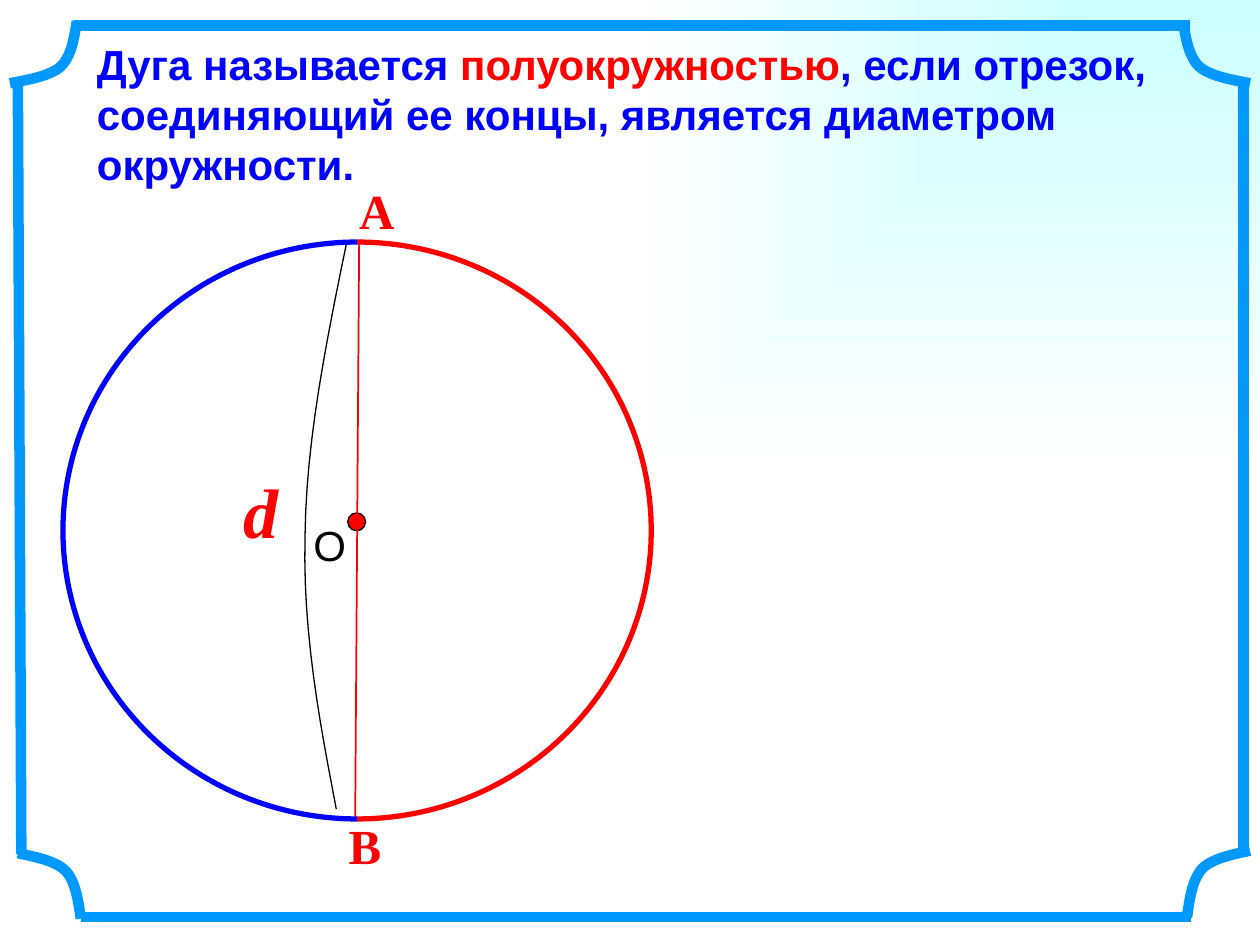
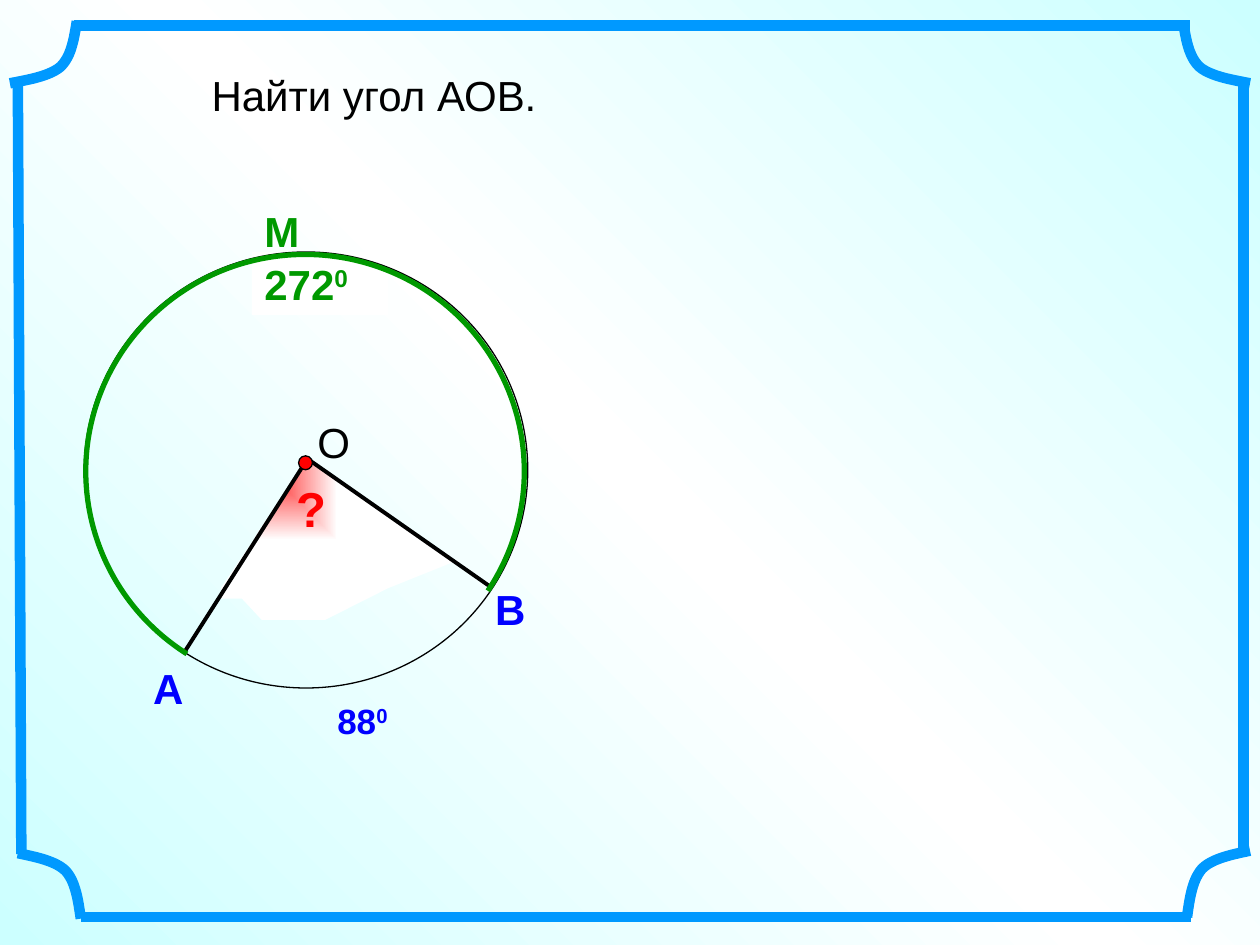
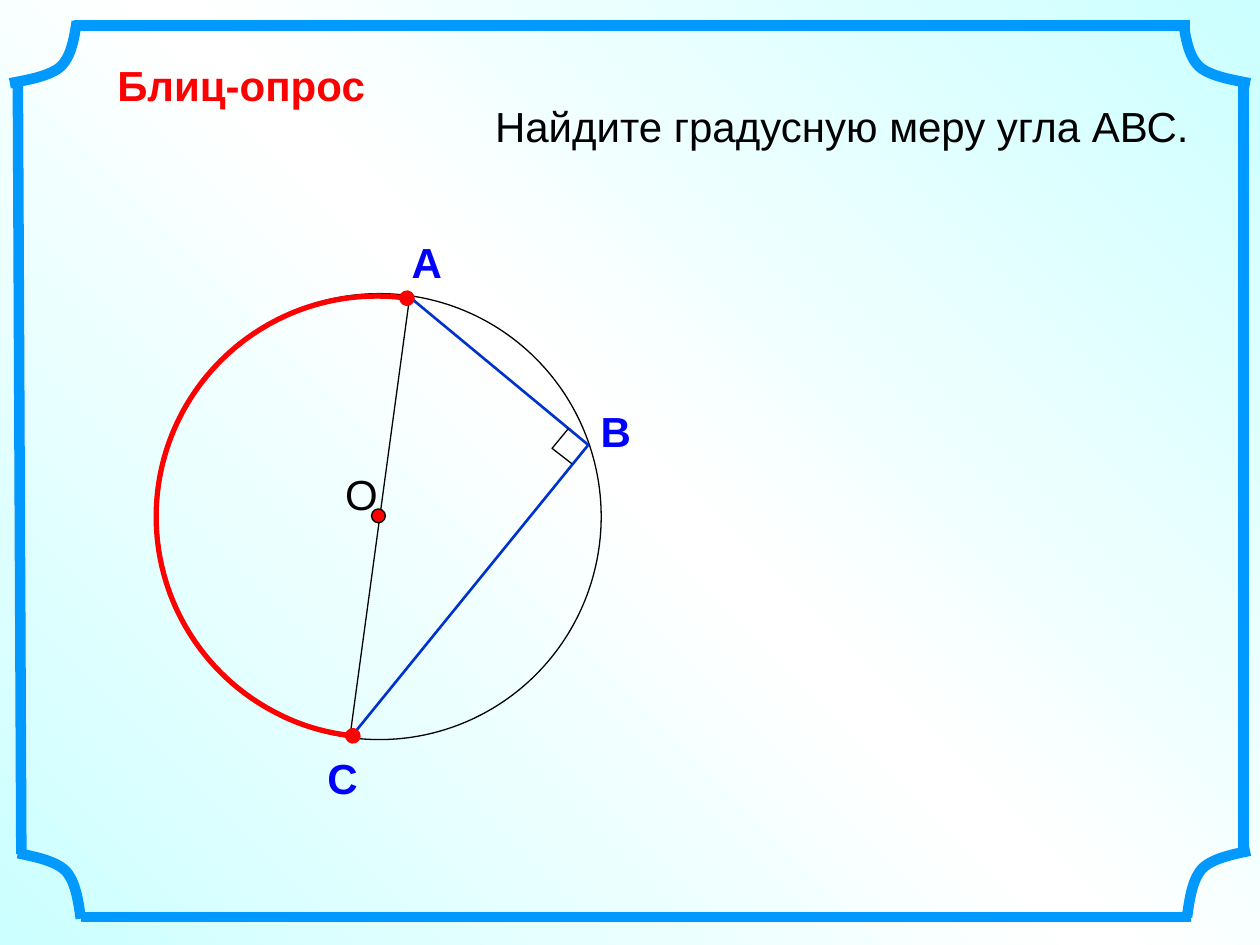
from lxml import etree
from pptx import Presentation
from pptx.dml.color import RGBColor
from pptx.enum import shapes, text
from pptx.oxml import parse_xml
from pptx.oxml.ns import nsdecls, qn
from pptx.util import Cm, Pt

BLACK = RGBColor(0x00, 0x00, 0x00)
WHITE = RGBColor(0xFF, 0xFF, 0xFF)
RED = RGBColor(0xFF, 0x00, 0x00)
BLUE = RGBColor(0x00, 0x00, 0xFF)
GREEN = RGBColor(0x00, 0x99, 0x00)
CHORD_BLUE = RGBColor(0x00, 0x33, 0xCC)
FRAME_BLUE = RGBColor(0x00, 0x99, 0xFF)
PALE_CYAN = RGBColor(0xCC, 0xFF, 0xFF)

SERIF = "Times New Roman"
FRAME_SIDES = [
    ((1.5, 0.51), (23.98, 0.51)),
    ((1.63, 18.49), (24, 18.49)),
    ((25.07, 1.68), (25.07, 17.22)),
    ((0.36, 1.68), (0.43, 17.22)),
]
FRAME_CORNERS = [
    ((0.2, 1.68), (1.55, 0.43)),
    ((25.2, 1.68), (23.85, 0.43)),
    ((0.36, 17.2), (1.63, 18.52)),
    ((25.2, 17.15), (23.93, 18.49)),
]
# Corner curve as fractions of the way from its first to its last point
CORNER_CURVE = [(0, 0), (0.3, 0.06), (0.6, 0.12), (0.76, 0.27),
                (0.92, 0.44), (0.96, 0.73), (1, 1)]
DIAGONAL = '<a:lin ang="18900000" scaled="0"/>'


def focus(left, top, right, bottom):
    """Rectangular gradient spreading from the given corner, in percent."""
    return (f'<a:path path="rect"><a:fillToRect l="{left}000" t="{top}000" '
            f'r="{right}000" b="{bottom}000"/></a:path>')


def make_gradient(solid, colors, shade):
    """Replace a solid fill element by evenly spaced gradient stops."""
    step = 100000 // (len(colors) - 1)
    stops = "".join(f'<a:gs pos="{i * step}"><a:srgbClr val="{color}"/></a:gs>'
                    for i, color in enumerate(colors))
    solid.getparent().replace(solid, parse_xml(
        f'<a:gradFill {nsdecls("a")} rotWithShape="1">'
        f'<a:gsLst>{stops}</a:gsLst>{shade}</a:gradFill>'))


def bezier(points, steps=12):
    """Points along joined cubic curves; neighbours share an end point."""
    track = [points[0]]
    for first in range(0, len(points) - 1, 3):
        segment = points[first:first + 4]
        for step in range(1, steps + 1):
            t = step / steps
            weights = ((1 - t) ** 3, 3 * t * (1 - t) ** 2, 3 * t * t * (1 - t), t ** 3)
            track.append(tuple(sum(w * point[axis] for w, point in zip(weights, segment))
                               for axis in (0, 1)))
    return track


class Lesson:
    def __init__(self):
        self.deck = Presentation()
        self.deck.slide_width, self.deck.slide_height = Cm(25.4), Cm(19.05)

    def new_slide(self, colors, shade):
        self.slide = self.deck.slides.add_slide(self.deck.slide_layouts[5])
        self.canvas = self.slide.shapes
        self.slide.background.fill.solid()
        self.slide.background.fill.fore_color.rgb = WHITE
        make_gradient(self.slide.element.xpath(".//p:bgPr/a:solidFill")[0], colors, shade)
        self.frame()

    def frame(self):
        self.canvas = self.slide.shapes.add_group_shape().shapes
        for start, end in FRAME_SIDES:
            self.line(start, end, FRAME_BLUE, 6)
        for (x1, y1), (x2, y2) in FRAME_CORNERS:
            curve = [(x1 + (x2 - x1) * u, y1 + (y2 - y1) * v) for u, v in CORNER_CURVE]
            self.outline(bezier(curve), FRAME_BLUE, 6)
        self.canvas = self.slide.shapes

    def style(self, shape, color, width, fill=None):
        shape.shadow.inherit = False
        if fill is None:
            shape.fill.background()
        else:
            shape.fill.solid()
            shape.fill.fore_color.rgb = fill
        if color is None:
            shape.line.fill.background()
        else:
            shape.line.color.rgb = color
            shape.line.width = Pt(width)
        return shape

    def line(self, start, end, color, width):
        ends = [Cm(value) for value in start + end]
        line = self.canvas.add_connector(shapes.MSO_CONNECTOR.STRAIGHT, *ends)
        line.line.color.rgb = color
        line.line.width = Pt(width)
        etree.SubElement(line.element.spPr, qn("a:effectLst"))

    def outline(self, points, color, width=0.75, fill=None, close=False):
        track = [(Cm(x), Cm(y)) for x, y in points]
        builder = self.canvas.build_freeform(*track[0])
        builder.add_line_segments(track[1:], close=close)
        return self.style(builder.convert_to_shape(), color, width, fill)

    def ellipse(self, left, top, width, height, fill=None):
        oval = self.canvas.add_shape(shapes.MSO_SHAPE.OVAL,
                                     Cm(left), Cm(top), Cm(width), Cm(height))
        self.style(oval, BLACK, 0.75, fill)

    def center(self, left, top, size):
        self.ellipse(left, top, size, size, RED)

    def arc(self, box, start, end, color, dotted_ends=False):
        """Clockwise arc of the ellipse in box; angles in degrees from the right."""
        arc = self.canvas.add_shape(shapes.MSO_SHAPE.ARC, *map(Cm, box))
        arc.adjustments[0], arc.adjustments[1] = start * 0.6, end * 0.6
        self.style(arc, color, 3)
        if dotted_ends:
            ln = arc.element.xpath("./p:spPr/a:ln")[0]
            for tag in ("a:headEnd", "a:tailEnd"):
                etree.SubElement(ln, qn(tag)).set("type", "oval")

    def put_text(self, shape, paragraphs, color, size, bold,
                 font="Arial", italic=False, wrap=True):
        body = shape.text_frame
        body.word_wrap = wrap
        body.auto_size = text.MSO_AUTO_SIZE.NONE
        body.vertical_anchor = text.MSO_ANCHOR.TOP
        for index, runs in enumerate(paragraphs):
            paragraph = body.add_paragraph() if index else body.paragraphs[0]
            paragraph.alignment = text.PP_ALIGN.LEFT
            for words in runs:
                paragraph.add_run().text = words
            style = paragraph.font
            style.name, style.size = font, Pt(size)
            style.bold, style.italic = bold, italic
            style.color.rgb = color

    def title(self, box, paragraphs, color, bold=True):
        title = self.slide.shapes.title
        title.left, title.top, title.width, title.height = map(Cm, box)
        self.put_text(title, paragraphs, color, 24, bold)
        return title.text_frame

    def label(self, words, left, top, color, width=1.27, height=1.27,
              size=24, bold=True, **extra):
        box = self.canvas.add_textbox(Cm(left), Cm(top), Cm(width), Cm(height))
        self.put_text(box, [[words]], color, size, bold, **extra)
        return box

    def degrees(self, number, left, top, color, **extra):
        """Number followed by a raised zero as the degree sign."""
        box = self.label(number, left, top, color, **extra)
        box.text_frame.paragraphs[0].add_run().text = "0"
        box.element.xpath(".//a:r")[-1].get_or_add_rPr().set("baseline", "30000")
        return box

    def center_name(self, left, top):
        self.label("О", left, top, BLACK, width=1.17, bold=False, wrap=False)


def semicircle(lesson):
    lesson.new_slide([PALE_CYAN, WHITE], focus(100, 0, 0, 100))
    definition = lesson.title((1.7, 0.64, 22.23, 3.3), [
        ["Дуга называется ", "полуокружностью", ", если отрезок,"],
        ["соединяющий ее концы, является диаметром окружности."],
    ], BLUE)
    definition.paragraphs[0].runs[1].font.color.rgb = RED

    circle = (1.27, 4.88, 11.86, 11.63)
    lesson.ellipse(*circle)
    lesson.center(7.01, 10.34, 0.36)
    lesson.center_name(6.07, 10.34)
    lesson.line((7.24, 4.88), (7.16, 16.51), RED, 1)
    lesson.arc(circle, 270, 90, RED)
    letter = dict(width=1.22, font=SERIF, wrap=False)
    lesson.label("А", 6.99, 3.51, RED, size=28, height=1.45, **letter)
    lesson.label("В", 6.78, 16.31, RED, size=28, height=1.45, **letter)
    lesson.label("d", 4.65, 9.32, RED, size=40, height=1.96, italic=True, **letter)
    lesson.outline(bezier([(6.99, 4.88), (6.58, 6.88), (6.17, 8.89), (6.15, 10.8),
                           (6.1, 12.7), (6.43, 14.5), (6.78, 16.31)]), BLACK)
    lesson.arc(circle, 90, 270, BLUE)


def central_angle(lesson):
    lesson.new_slide([PALE_CYAN, WHITE, PALE_CYAN], DIAGONAL)
    lesson.title((4.01, 1.27, 16.51, 1.27), [["Найти угол АОВ."]], BLACK, bold=False)

    lesson.label("M", 5.08, 4.01, GREEN)
    large_arc = lesson.degrees("272", 5.08, 5.08, GREEN, width=2.74)
    large_arc.fill.solid()
    large_arc.fill.fore_color.rgb = WHITE
    sector = lesson.outline([(4.45, 11.86), (6.2, 9.27), (9.14, 11.33), (7.82, 11.86),
                             (6.55, 12.5), (5.28, 12.5), (4.88, 12.07), (4.45, 12.07)],
                            None, fill=RED, close=True)
    make_gradient(sector.element.xpath("./p:spPr/a:solidFill")[0],
                  [RED, WHITE], focus(0, 0, 100, 100))
    lesson.outline([(3.71, 13.16), (6.2, 9.25), (9.86, 11.81)], BLACK, 2.25)
    lesson.label("А", 2.84, 13.23, BLUE, width=0.84)
    lesson.label("В", 9.73, 11.63, BLUE)
    lesson.ellipse(1.7, 5.08, 8.94, 8.79)
    lesson.center(6.02, 9.19, 0.28)
    lesson.center_name(6.15, 8.28)
    lesson.label("?", 5.72, 9.53, RED, width=1.07, height=1.45, size=28)
    lesson.arc((1.73, 5.13, 8.84, 8.74), 122.9, 33.2, GREEN)
    lesson.degrees("88", 6.55, 13.97, BLUE, width=2.54, height=1.09, size=20)


def inscribed_angle(lesson):
    lesson.new_slide([PALE_CYAN, WHITE, PALE_CYAN], DIAGONAL)
    lesson.title((2.11, 1.07, 7.82, 1.27), [["Блиц-опрос"]], RED)
    lesson.label("Найдите градусную меру угла АВС.", 9.73, 1.91, BLACK,
                 width=14.81, bold=False)

    lesson.line((8.26, 5.97), (7.06, 14.81), BLACK, 0.75)
    lesson.center_name(6.71, 9.32)
    lesson.ellipse(3.18, 5.92, 8.94, 8.99)
    lesson.center(7.49, 10.26, 0.28)
    for vertex, left, top in [("В", 11.86, 8.05), ("А", 8.05, 4.65), ("С", 6.35, 15.04)]:
        lesson.label(vertex, left, top, BLUE)
    lesson.outline([(8.26, 5.99), (11.86, 8.97), (7.06, 14.88)], CHORD_BLUE, 1.5)
    lesson.arc((3.15, 5.97, 8.89, 8.89), 96.2, 277.9, RED, dotted_ends=True)
    lesson.outline([(11.53, 9.35), (11.13, 9.04), (11.46, 8.64)], BLACK)


def main():
    lesson = Lesson()
    semicircle(lesson)
    central_angle(lesson)
    inscribed_angle(lesson)
    lesson.deck.save("out.pptx")


if __name__ == "__main__":
    main()
